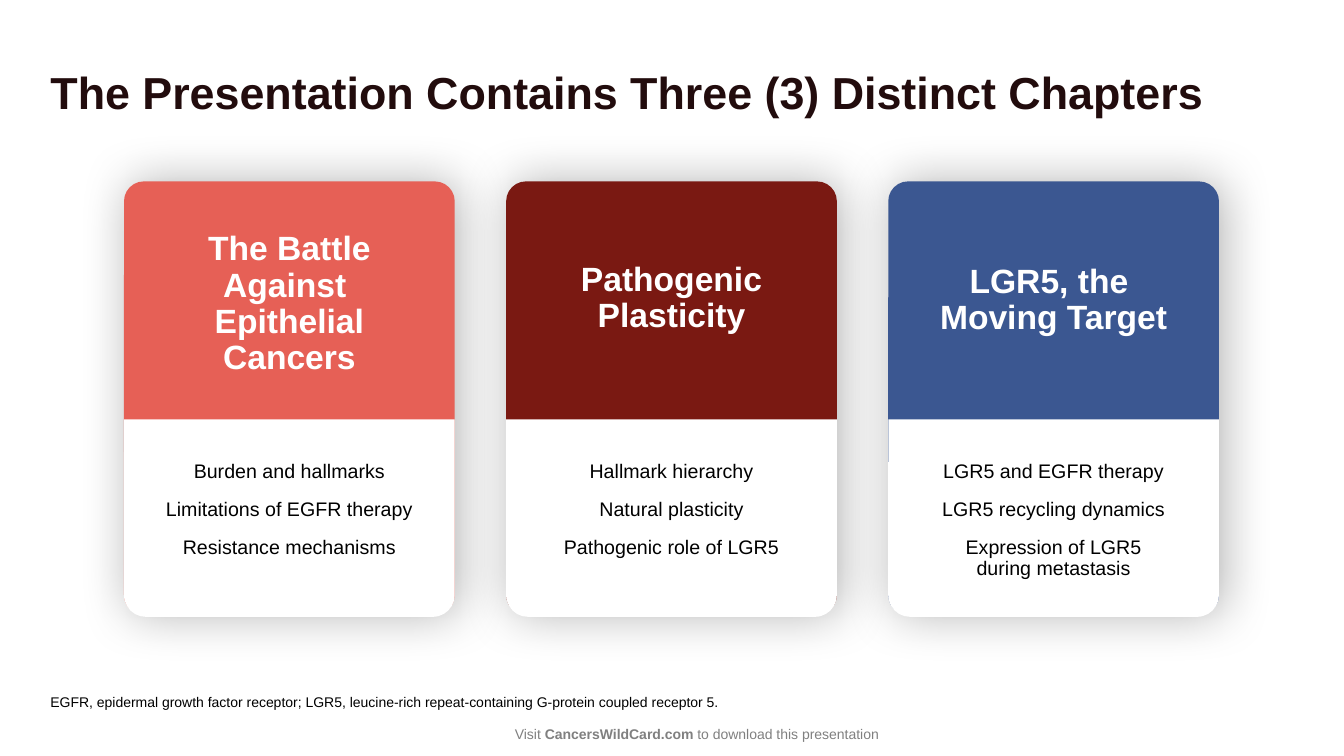
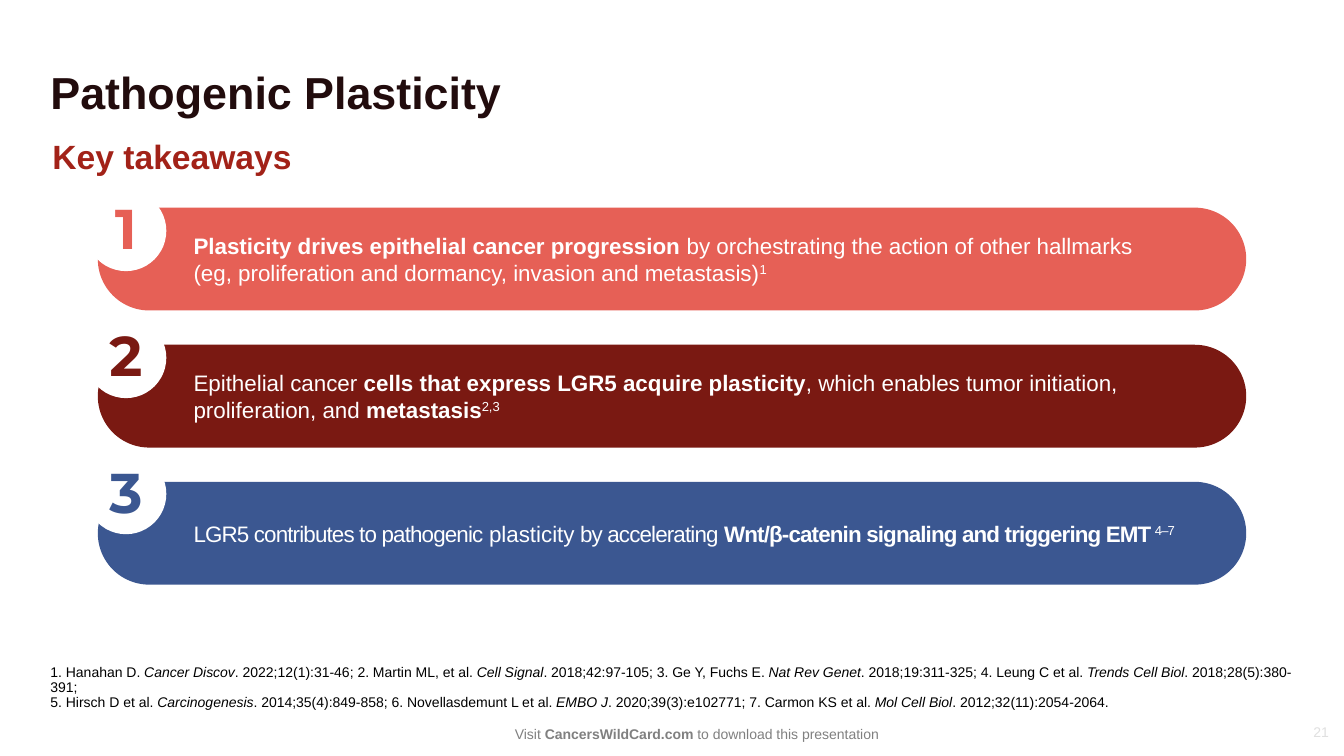
import pptx
import pptx.util
import pptx.dml.color
import pptx.enum.shapes
import pptx.enum.text
import pptx.oxml
import pptx.oxml.ns

Inches = pptx.util.Inches
Pt = pptx.util.Pt
KIND = pptx.enum.shapes.MSO_SHAPE
ALIGN = pptx.enum.text.PP_ALIGN
ANCHOR = pptx.enum.text.MSO_ANCHOR

CORAL, MAROON, BLUE = "E66056", "7A1912", "3B5791"
WHITE, BLACK, GREY, PALE = "FFFFFF", "000000", "808080", "E0E0E0"
INK, RED = "220C0D", "A22218"
BOLD, ITALIC, SUPER = {"bold": True}, {"italic": True}, {"base": 30000}
TIGHT = {"spc": -60}

FOOTER = [("Visit ", {}), ("CancersWildCard.com", BOLD), (" to download this presentation", {})]

CARDS = [
    (CORAL, 2.25, "The Battle Against \nEpithelial Cancers",
     ["Burden and hallmarks", "Limitations of EGFR therapy", "Resistance mechanisms"]),
    (MAROON, 2.55, "Pathogenic Plasticity",
     ["Hallmark hierarchy", "Natural plasticity", "Pathogenic role of LGR5"]),
    (BLUE, 2.57, "LGR5, the \nMoving Target",
     ["LGR5 and EGFR therapy", "LGR5 recycling dynamics", "Expression of LGR5\nduring metastasis"]),
]
TERMS = [("EGFR, epidermal growth factor receptor; LGR5, leucine-rich repeat-containing "
          "G-protein coupled receptor 5.", {})]

POINTS = [
    (CORAL, 1.89, [
        ("Plasticity drives epithelial cancer progression ", BOLD),
        ("by orchestrating the action of other hallmarks \n"
         "(eg, proliferation and dormancy, invasion and metastasis)", {}),
        ("1", SUPER)]),
    (MAROON, 3.15, [
        ("Epithelial cancer ", {}),
        ("cells that express LGR5 acquire plasticity", BOLD),
        (", which enables tumor initiation, proliferation, and ", {}),
        ("metastasis", BOLD),
        ("2,3", SUPER)]),
    (BLUE, 4.5, [
        ("LGR5 contributes to pathogenic ", TIGHT),
        ("plasticity", {}),
        (" by accelerating ", TIGHT),
        ("Wnt/β-catenin signaling and triggering EMT", BOLD | TIGHT),
        (" ", BOLD | TIGHT | {"size": 8}),
        ("4–7", SUPER | TIGHT)]),
]
REFS = [
    ("1. Hanahan D. ", {}), ("Cancer Discov", ITALIC),
    (". 2022;12(1):31-46; 2. Martin ML, et al. ", {}), ("Cell Signal", ITALIC),
    (". 2018;42:97-105; 3. Ge Y, Fuchs E. ", {}), ("Nat Rev Genet", ITALIC),
    (". 2018;19:311-325; 4. Leung C et al. ", {}), ("Trends Cell Biol", ITALIC),
    (". 2018;28(5):380-391; \n5. Hirsch D et al. ", {}), ("Carcinogenesis", ITALIC),
    (". 2014;35(4):849-858; 6. Novellasdemunt L et al. ", {}), ("EMBO J", ITALIC),
    (". 2020;39(3):e102771; 7. Carmon KS et al. ", {}), ("Mol Cell Biol", ITALIC),
    (". 2012;32(11):2054-2064.", {}),
]


def rgb(code):
    return pptx.dml.color.RGBColor.from_string(code)


def add_run(para, text, size, color, font, style):
    for num, line in enumerate(text.split("\n")):
        if num:
            para.add_line_break()
        run = para.add_run()
        run.text = line
        face = run.font
        face.name, face.size = font, Pt(style.get("size", size))
        face.color.rgb = rgb(color)
        face.bold = style.get("bold", False)
        face.italic = style.get("italic", False)
        props = run._r.get_or_add_rPr()
        for key, name in (("base", "baseline"), ("spc", "spc")):
            if key in style:
                props.set(name, str(style[key]))


def write(shape, paras, size, color, align=ALIGN.LEFT, anchor=ANCHOR.TOP,
          inset=(0, 0, 0, 0), line=0.9, after=0, font="Arial"):
    frame = shape.text_frame
    frame.word_wrap = True
    frame.auto_size = pptx.enum.text.MSO_AUTO_SIZE.NONE
    frame.vertical_anchor = anchor
    (frame.margin_left, frame.margin_top,
     frame.margin_right, frame.margin_bottom) = map(Inches, inset)
    for num, runs in enumerate(paras):
        para = frame.add_paragraph() if num else frame.paragraphs[0]
        para.alignment, para.line_spacing = align, line
        para.space_before, para.space_after = Pt(0), Pt(after)
        for text, style in runs:
            add_run(para, text, size, color, font, style)


def place(shape, left, top, width, height):
    shape.left, shape.top = Inches(left), Inches(top)
    shape.width, shape.height = Inches(width), Inches(height)


def add_box(slide, left, top, width, height):
    return slide.shapes.add_textbox(*map(Inches, (left, top, width, height)))


def add_form(slide, kind, color, spot, adjust=()):
    shape = slide.shapes.add_shape(kind, *map(Inches, spot))
    shape.shadow.inherit = False
    shape.fill.solid()
    shape.fill.fore_color.rgb = rgb(color)
    shape.line.fill.background()
    for num, value in enumerate(adjust):
        shape.adjustments[num] = value
    return shape


def add_shadow(shape):
    effects = shape._element.spPr.find(pptx.oxml.ns.qn("a:effectLst"))
    effects.append(pptx.oxml.parse_xml(
        f'<a:outerShdw {pptx.oxml.ns.nsdecls("a")} blurRad="{Pt(35.6)}" dist="{Pt(3)}" '
        'dir="0" algn="ctr" rotWithShape="0"><a:srgbClr val="000000">'
        '<a:alpha val="30000"/></a:srgbClr></a:outerShdw>'))


def add_slide(deck, title, notes):
    slide = deck.slides.add_slide(deck.slide_layouts[1])
    head, body = slide.shapes.title, slide.placeholders[1]
    place(head, 0.5, 0.73, 12.33, 0.44)
    write(head, [[(title, BOLD)]], 32, INK, anchor=ANCHOR.BOTTOM, line=0.79)
    place(body, 0.5, 6.65, 12.33, 0.4)
    props = body.text_frame.paragraphs[0]._p.get_or_add_pPr()
    props.set("marL", "0")
    props.set("indent", "0")
    props.append(pptx.oxml.parse_xml(f'<a:buNone {pptx.oxml.ns.nsdecls("a")}/>'))
    write(body, [notes], 10, BLACK, anchor=ANCHOR.BOTTOM)
    write(add_box(slide, 4.4, 7.14, 5.12, 0.27), [FOOTER], 10, GREY, ALIGN.CENTER,
          ANCHOR.BOTTOM, (0, 0.05, 0.1, 0.05), line=1)
    return slide


def add_cards(slide):
    width, pitch = 3.28, 3.79
    for num, (color, top, name, items) in enumerate(CARDS):
        left = 1.23 + num * pitch
        add_shadow(add_form(slide, KIND.ROUNDED_RECTANGLE, color,
                            (left, 1.8, width, 4.3), [0.06]))
        add_form(slide, KIND.ROUND_2_SAME_RECTANGLE, WHITE,
                 (left, 4.16, width, 1.96), [0, 0.11])
        write(add_box(slide, left, top, width, 1.55), [[(name, BOLD)]], 24, WHITE,
              ALIGN.CENTER, inset=(0.3, 0.05, 0.3, 0.05))
        write(add_box(slide, left, 4.53, width, 1.29), [[(item, {})] for item in items],
              14, BLACK, ALIGN.CENTER, inset=(0.1, 0.05, 0.1, 0.05), after=12)


def add_points(slide):
    write(add_box(slide, 0.52, 1.39, 12.33, 0.36), [[("Key takeaways", BOLD)]], 24, RED)
    for num, (color, top, runs) in enumerate(POINTS):
        bar = add_form(slide, KIND.ROUNDED_RECTANGLE, color,
                       (0.97, 2.06 + num * 1.36, 11.39, 1.02), [0.5])
        write(bar, [runs], 16, WHITE, anchor=ANCHOR.MIDDLE,
              inset=(0.8, 0.05, 0.4, 0.05), line=1)
        disc = add_form(slide, KIND.OVAL, WHITE, (0.85, top, 0.8, 0.8))
        write(disc, [[(str(num + 1), BOLD)]], 40, color, ALIGN.CENTER, ANCHOR.MIDDLE,
              (0.1, 0.05, 0.1, 0.05), line=0.95, font="Montserrat")
    write(add_box(slide, 12.6, 7.16, 0.58, 0.2), [[("21", {})]], 10, PALE,
          ALIGN.RIGHT, ANCHOR.MIDDLE, line=1)


def main():
    deck = pptx.Presentation()
    deck.slide_width, deck.slide_height = Inches(13.33), Inches(7.5)
    add_cards(add_slide(deck, "The Presentation Contains Three (3) Distinct Chapters", TERMS))
    add_points(add_slide(deck, "Pathogenic Plasticity", REFS))
    deck.save("out.pptx")


if __name__ == "__main__":
    main()
